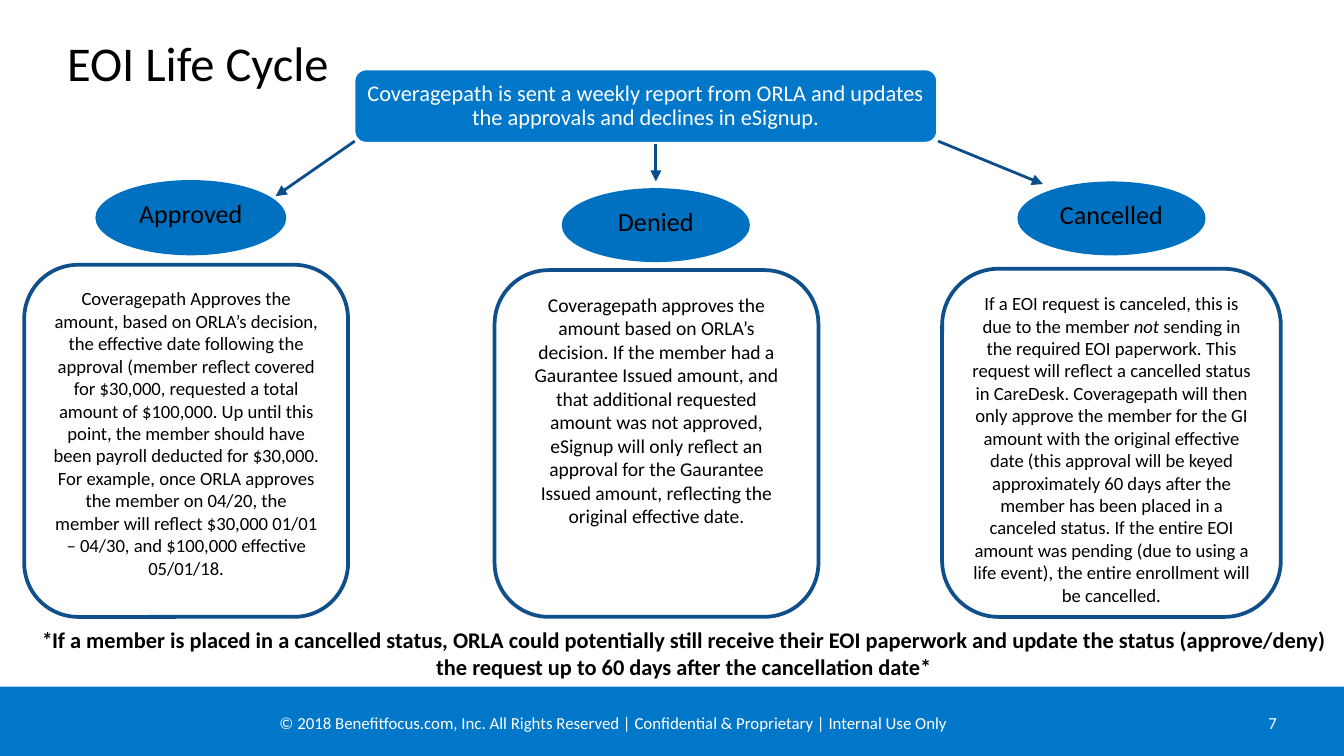
from dataclasses import dataclass

from lxml import etree
from pptx import Presentation
from pptx.dml.color import RGBColor
from pptx.enum.shapes import MSO_CONNECTOR, MSO_SHAPE
from pptx.enum.text import MSO_ANCHOR, PP_ALIGN
from pptx.oxml.ns import qn
from pptx.util import Inches, Pt

RECT, ROUND, OVAL = MSO_SHAPE.RECTANGLE, MSO_SHAPE.ROUNDED_RECTANGLE, MSO_SHAPE.OVAL
STRAIGHT = MSO_CONNECTOR.STRAIGHT
LEFT, CENTER, RIGHT = PP_ALIGN.LEFT, PP_ALIGN.CENTER, PP_ALIGN.RIGHT
TOP, MIDDLE = MSO_ANCHOR.TOP, MSO_ANCHOR.MIDDLE

FONT = "Calibri"
COLORS = {
    "brand": "0077C8", "oval": "0070C0", "border": "0F4F8B",
    "arrow": "0C4D8B", "white": "FFFFFF", "black": "000000",
}
WIDTH = Inches(10)
HEIGHT = WIDTH * 9 // 16
CELL = WIDTH // 100
INSETS = (1, 0.5, 1, 0.5)


@dataclass
class Area:
    col: float
    row: float
    cols: float
    rows: float

    def emu(self) -> list[int]:
        return [cells(n) for n in (self.col, self.row, self.cols, self.rows)]


@dataclass
class Run:
    text: str
    italic: bool = False


@dataclass
class Style:
    size: float
    color: str = "black"
    align: PP_ALIGN = CENTER
    anchor: MSO_ANCHOR = TOP
    bold: bool = False
    spacing: float | None = None
    insets: tuple = INSETS


@dataclass
class Outcome:
    name: str
    oval: Area
    box: Area
    size: float
    runs: list[Run]
    arrow: tuple


OUTCOMES = [
    Outcome("Approved", Area(7.1, 13.4, 14.2, 5.6), Area(1.8, 19.7, 24.1, 26.2), 10, [
        Run("Coveragepath Approves the amount, based on ORLA’s decision, the effective date "
            "following the approval (member reflect covered for $30,000, requested a total "
            "amount of $100,000. Up until this point, the member should have been payroll "
            "deducted for $30,000. For example, once ORLA approves the member on 04/20, the "
            "member will reflect $30,000 01/01 – 04/30, and $100,000 effective 05/01/18."),
    ], (26.4, 10.5, 20.5, 14.6)),
    Outcome("Denied", Area(41.8, 14, 14, 5.5), Area(36.8, 20.1, 24.1, 25.8), 10.5, [
        Run("Coveragepath approves the amount based on ORLA’s decision. If the member had a "
            "Gaurantee Issued amount, and that additional requested amount was not approved, "
            "eSignup will only reflect an approval for the Gaurantee Issued amount, "
            "reflecting the original effective date."),
    ], (48.8, 10.7, 48.8, 13.5)),
    Outcome("Cancelled", Area(75.7, 13.5, 14, 5.5), Area(70.1, 20, 25.2, 25.9), 10, [
        Run("If a EOI request is canceled, this is due to the member "),
        Run("not ", True),
        Run("sending in the required EOI paperwork. This request will reflect a cancelled "
            "status in CareDesk. Coveragepath will then only approve the member for the GI "
            "amount with the original effective date (this approval will be keyed "
            "approximately 60 days after the member has been placed in a canceled status. "
            "If the entire EOI amount was pending (due to using a life event), the entire "
            "enrollment will be cancelled."),
    ], (69.8, 10.5, 77.6, 13.7)),
]


def cells(n: float) -> int:
    return round(n * CELL)


def rgb(name: str) -> RGBColor:
    return RGBColor.from_string(COLORS[name])


def write(s, runs: list[Run], style: Style) -> None:
    tf = s.text_frame
    tf.word_wrap = True
    tf.vertical_anchor = style.anchor
    tf.margin_left, tf.margin_top, tf.margin_right, tf.margin_bottom = map(cells, style.insets)
    p = tf.paragraphs[0]
    p.alignment = style.align
    if style.spacing:
        p.line_spacing = style.spacing
    p.font.name = FONT
    p.font.size = Pt(style.size)
    p.font.bold = style.bold
    p.font.color.rgb = rgb(style.color)
    for run in runs:
        r = p.add_run()
        r.text = run.text
        if run.italic:
            r.font.italic = True


def add_text(slide, area: Area, runs: list[Run], style: Style) -> None:
    write(slide.shapes.add_textbox(*area.emu()), runs, style)


def add_box(slide, kind: MSO_SHAPE, area: Area, fill: str, line: str | None = None):
    s = slide.shapes.add_shape(kind, *area.emu())
    s.shadow.inherit = False
    s.fill.solid()
    s.fill.fore_color.rgb = rgb(fill)
    if line:
        s.line.color.rgb = rgb(line)
        s.line.width = Pt(2)
    else:
        s.line.fill.background()
    return s


def add_arrow(slide, ends: tuple) -> None:
    c = slide.shapes.add_connector(STRAIGHT, *map(cells, ends))
    c.line.color.rgb = rgb("arrow")
    c.line.width = Pt(1.5)
    etree.SubElement(c.line._get_or_add_ln(), qn("a:tailEnd"), type="triangle")
    etree.SubElement(c._element.spPr, qn("a:effectLst"))


def add_outcome(slide, outcome: Outcome) -> None:
    add_arrow(slide, outcome.arrow)
    oval = add_box(slide, OVAL, outcome.oval, "oval")
    write(oval, [Run(outcome.name)], Style(14))
    box = add_box(slide, ROUND, outcome.box, "white", "border")
    write(box, outcome.runs, Style(outcome.size))


def main() -> None:
    prs = Presentation()
    prs.slide_width, prs.slide_height = WIDTH, HEIGHT
    slide = prs.slides.add_slide(prs.slide_layouts[6])

    add_box(slide, RECT, Area(0, 51.1, 100, 5.15), "brand")
    add_text(slide, Area(20.8, 52.5, 67.4, 2.5), [
        Run("© 2018 Benefitfocus.com, Inc. All Rights Reserved | "
            "Confidential & Proprietary | Internal Use Only"),
    ], Style(9, "white", LEFT, insets=(0, 0.5, 1, 0.5)))
    add_text(slide, Area(83.8, 52.5, 11.2, 2.5), [Run("7")],
             Style(9, "white", RIGHT, insets=(1, 0.5, 0, 0.5)))
    add_text(slide, Area(5, 2.4, 90, 5), [Run("EOI Life Cycle")],
             Style(26, align=LEFT, spacing=Pt(28), insets=(0, 0.5, 1, 0.5)))

    report = add_box(slide, ROUND, Area(26.3, 5.1, 43.5, 5.6), "brand", "white")
    report.adjustments[0] = 0.1667
    write(report, [
        Run("Coveragepath is sent a weekly report from ORLA and updates "
            "the approvals and declines in eSignup."),
    ], Style(12, "white", anchor=MIDDLE, spacing=0.9, insets=(0.5,) * 4))

    for outcome in OUTCOMES:
        add_outcome(slide, outcome)

    add_text(slide, Area(1.8, 46.1, 98.2, 5), [
        Run("*", True),
        Run("If a member is placed in a cancelled status, ORLA could potentially still "
            "receive their EOI paperwork and update the status (approve/deny) the request "
            "up to 60 days after the cancellation date*"),
    ], Style(12, bold=True))

    prs.save("out.pptx")


if __name__ == "__main__":
    main()
